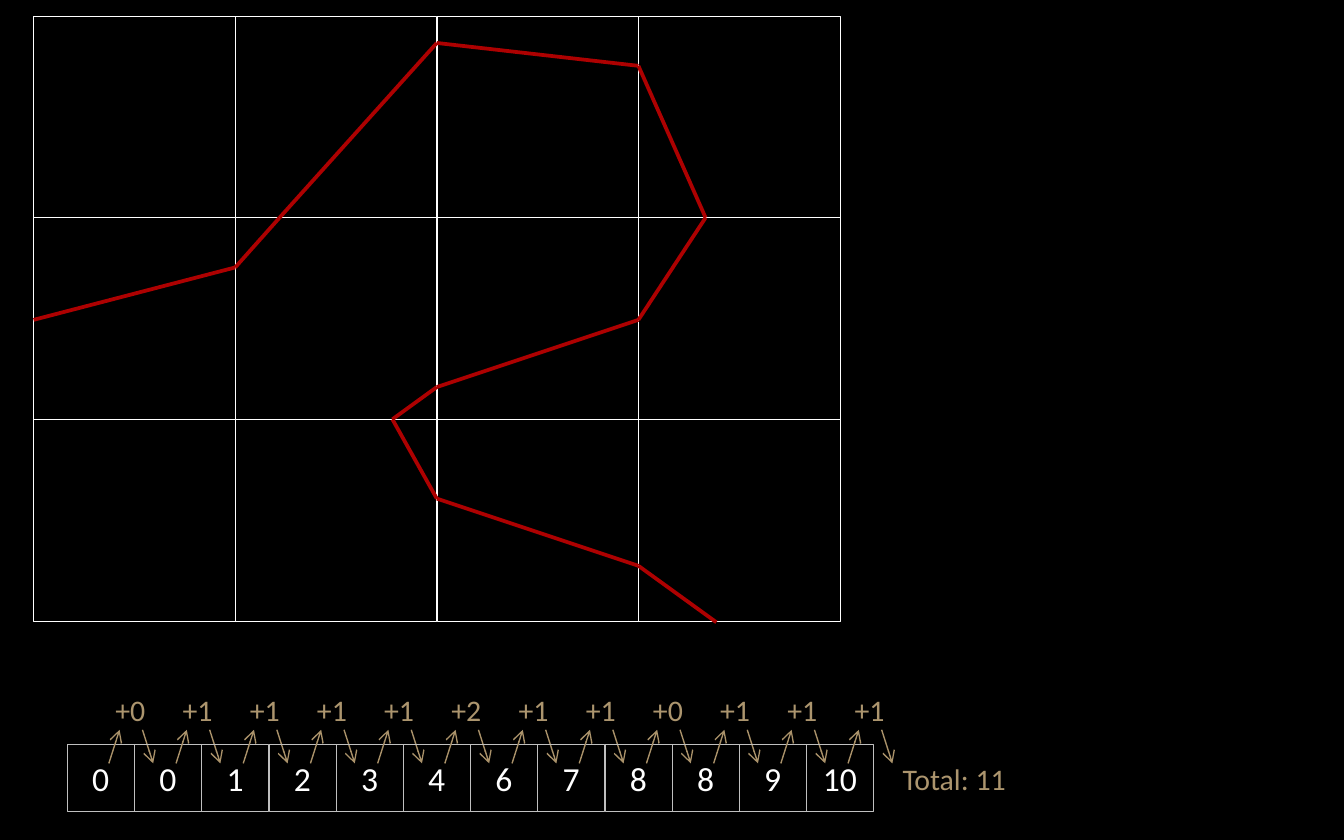
from itertools import accumulate, pairwise, product

from lxml.etree import SubElement
from pptx import Presentation
from pptx.dml.color import RGBColor
from pptx.enum.shapes import MSO_CONNECTOR as Connector, MSO_SHAPE as Shape
from pptx.enum.text import MSO_ANCHOR as Anchor, PP_ALIGN as Align
from pptx.oxml.ns import qn
from pptx.util import Inches, Pt

COLORS = {
    "background": "000000",
    "grid": "FFFFFF",
    "contour": "AD0101",
    "box": "BFBFBF",
    "number": "FFFFFF",
    "step": "AC956E",
    "arrow": "AA926A",
}
FONT = "Calibri"

# Cell grid
CELL = 1.5
GRID_LEFT, GRID_TOP = 0.25, 0.12
ROWS, COLUMNS = 3, 4

# Points where the contour crosses the grid lines
CONTOUR = [
    (0.25, 2.38), (1.75, 1.99), (2.08, 1.62), (3.25, 0.32),
    (4.75, 0.49), (5.25, 1.62), (4.75, 2.38), (3.25, 2.88),
    (2.92, 3.12), (3.25, 3.71), (4.75, 4.21), (5.33, 4.63),
]

# Points added by each cell, summed up along the row of boxes
STEPS = [0, 1, 1, 1, 1, 2, 1, 1, 0, 1, 1, 1]
BOX = 0.5
BOX_LEFT, BOX_TOP = 0.5, 5.54
STEP_TOP = 5.03
ARROW_TOP, ARROW_BOTTOM = 5.43, 5.68


def color(name):
    return RGBColor.from_string(COLORS[name])


def write_text(shape, text, *, size, color_name):
    frame = shape.text_frame
    frame.word_wrap = True
    frame.vertical_anchor = Anchor.MIDDLE
    frame.margin_left = frame.margin_right = 0
    frame.margin_top = frame.margin_bottom = 0
    paragraph = frame.paragraphs[0]
    paragraph.alignment = Align.CENTER
    run = paragraph.add_run()
    run.text = text
    run.font.name = FONT
    run.font.size = Pt(size)
    run.font.color.rgb = color(color_name)


def add_square(slide, left, top, side, line_color):
    square = slide.shapes.add_shape(
        Shape.RECTANGLE, Inches(left), Inches(top), Inches(side), Inches(side)
    )
    square.shadow.inherit = False
    square.fill.background()
    square.line.color.rgb = color(line_color)
    square.line.width = Pt(0.25)
    return square


def add_label(slide, text, left, top, width):
    label = slide.shapes.add_textbox(
        Inches(left), Inches(top), Inches(width), Inches(BOX)
    )
    write_text(label, text, size=16, color_name="step")


def add_line(shapes, start, end, *, color_name, width, arrow=False):
    line = shapes.add_connector(
        Connector.STRAIGHT, *(Inches(value) for value in (*start, *end))
    )
    line.line.color.rgb = color(color_name)
    line.line.width = Pt(width)
    properties = line._element.spPr
    if arrow:
        SubElement(properties.find(qn("a:ln")), qn("a:tailEnd"), type="arrow")
    SubElement(properties, qn("a:effectLst"))


def add_arrow_pair(slide, left):
    """Arrows from a box up to its step and down to the next box."""
    group = slide.shapes.add_group_shape()
    up = (left + 0.31, ARROW_BOTTOM), (left + 0.39, ARROW_TOP)
    down = (left + 0.56, ARROW_TOP), (left + 0.64, ARROW_BOTTOM)
    for start, end in (up, down):
        add_line(group.shapes, start, end,
                 color_name="arrow", width=0.75, arrow=True)


def main():
    presentation = Presentation()
    presentation.slide_width = Inches(10)
    presentation.slide_height = Inches(6.25)
    slide = presentation.slides.add_slide(presentation.slide_layouts[6])
    slide.background.fill.solid()
    slide.background.fill.fore_color.rgb = color("background")

    # Grid of cells
    for row, column in product(range(ROWS), range(COLUMNS)):
        add_square(slide, GRID_LEFT + column * CELL, GRID_TOP + row * CELL,
                   CELL, "grid")

    # Contour through the cells
    for start, end in pairwise(CONTOUR):
        add_line(slide.shapes, start, end, color_name="contour", width=2)

    # Running sum with its steps
    *sums, total = accumulate(STEPS, initial=0)
    for index, (value, step) in enumerate(zip(sums, STEPS)):
        left = BOX_LEFT + index * BOX
        box = add_square(slide, left, BOX_TOP, BOX, "box")
        write_text(box, str(value), size=18, color_name="number")
        add_label(slide, f"+{step}", left + 0.22, STEP_TOP, BOX)
        add_arrow_pair(slide, left)
    add_label(slide, f"Total: {total}", 6.56, BOX_TOP, 1.08)

    presentation.save("out.pptx")


if __name__ == "__main__":
    main()
